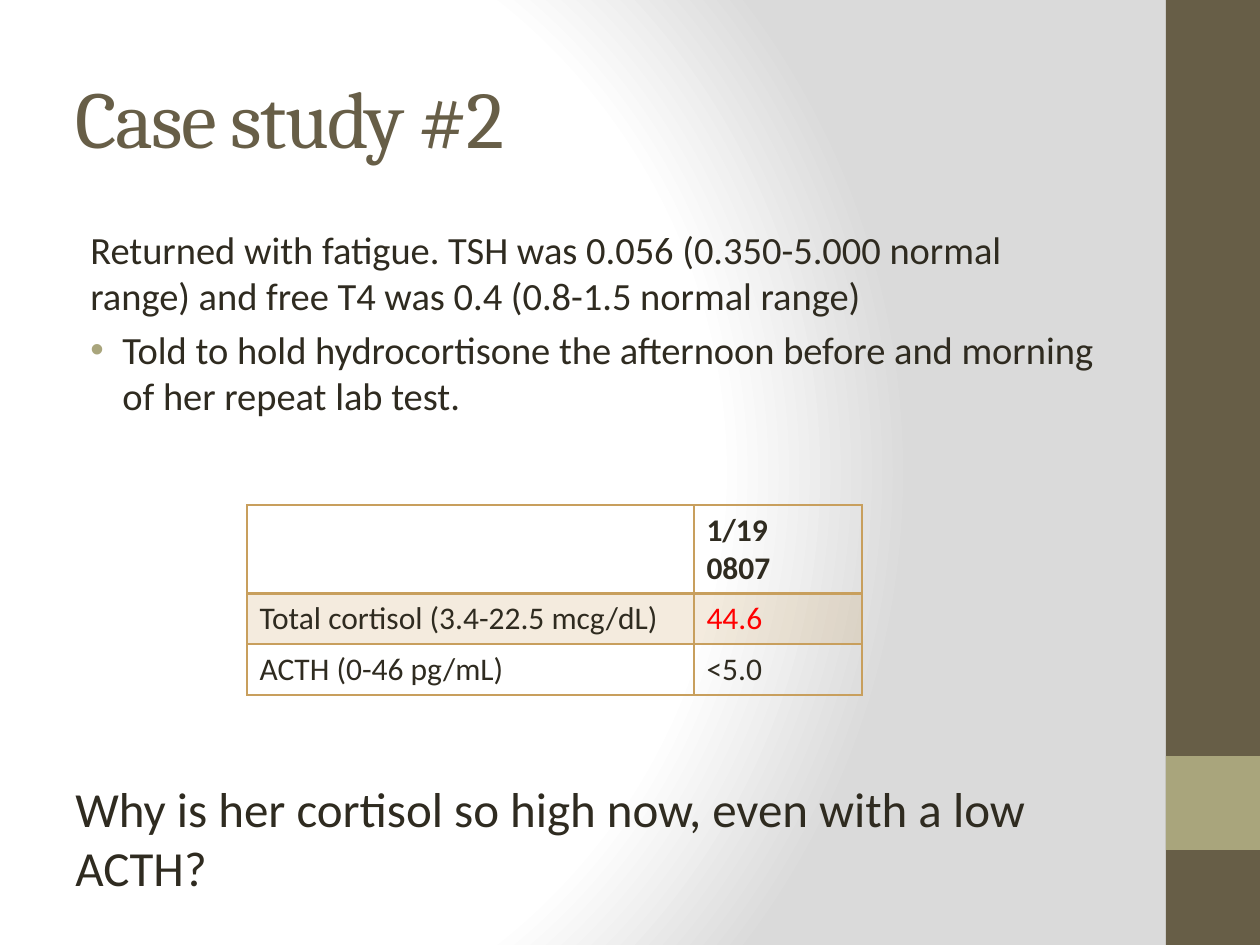
from lxml import etree
from pptx import Presentation
from pptx.dml.color import RGBColor
from pptx.enum.shapes import MSO_SHAPE
from pptx.enum.text import MSO_ANCHOR
from pptx.oxml.ns import qn
from pptx.util import Pt

RECT = MSO_SHAPE.RECTANGLE
TOP, MIDDLE = MSO_ANCHOR.TOP, MSO_ANCHOR.MIDDLE
BROWN = RGBColor(0x67, 0x5E, 0x47)
OLIVE = RGBColor(0xA9, 0xA5, 0x7C)
INK = RGBColor(0x2F, 0x2B, 0x20)
GOLD = RGBColor(0xC8, 0x9F, 0x5D)
RED = RGBColor(0xFF, 0x00, 0x00)
WHITE = RGBColor(0xFF, 0xFF, 0xFF)
GREY = RGBColor(0xDA, 0xDA, 0xDA)
LABS = [["", "1/19\n0807"],
        ["Total cortisol (3.4-22.5 mcg/dL)", "44.6"],
        ["ACTH (0-46 pg/mL)", "<5.0"]]


def px(n):
    """Turn pixels into EMU."""
    return int(n * 914400 / 126)


def sub(node, tag, **attrs):
    """Append a child element with attributes."""
    return etree.SubElement(node, qn(tag), {k: str(v) for k, v in attrs.items()})


def sub_color(node, color):
    """Append a solid colour fill."""
    return sub(sub(node, "a:solidFill"), "a:srgbClr", val=color)


def set_back(slide):
    """Give the slide its round gradient background."""
    slide.background.fill.gradient()
    grad = slide.element.find(".//" + qn("a:gradFill"))
    for child in list(grad):
        grad.remove(child)
    stops = sub(grad, "a:gsLst")
    for pos, color in ((0, WHITE), (75, WHITE), (100, GREY)):
        sub(sub(stops, "a:gs", pos=pos * 1000), "a:srgbClr", val=color)
    way = sub(grad, "a:path", path="circle")
    sub(way, "a:fillToRect", l=20000, t=50000, r=100000, b=50000)


def add_bar(slide, x, y, w, h, color):
    """Add a plain filled rectangle."""
    bar = slide.shapes.add_shape(RECT, px(x), px(y), px(w), px(h))
    bar.shadow.inherit = False
    bar.fill.solid()
    bar.fill.fore_color.rgb = color
    bar.line.fill.background()


def add_frame(slide, x, y, w, h, anchor=TOP):
    """Add a wrapping text box and return its text frame."""
    frame = slide.shapes.add_textbox(px(x), px(y), px(w), px(h)).text_frame
    frame.word_wrap = True
    frame.vertical_anchor = anchor
    return frame


def add_run(para, text, size, color=INK, font="Calibri", bold=False):
    """Add one styled run."""
    run = para.add_run()
    run.text = text
    run.font.size = Pt(size)
    run.font.name = font
    run.font.bold = bold
    run.font.color.rgb = color
    return run


def set_indent(para, left, first=0, dot=None):
    """Set indents and space before, with a bullet if a colour is given."""
    para.space_before = Pt(4.4)
    props = para._p.get_or_add_pPr()
    props.set("marL", str(px(left)))
    props.set("indent", str(px(first)))
    if dot is not None:
        sub(sub(props, "a:buClr"), "a:srgbClr", val=dot)
        sub(props, "a:buFont", typeface="Arial")
        sub(props, "a:buChar", char="•")


def set_edges(cell, base):
    """Draw the four cell borders, the lower one of the given width."""
    props = cell._tc.get_or_add_tcPr()
    for tag, width in (("a:lnL", 1), ("a:lnR", 1), ("a:lnT", 1), ("a:lnB", base)):
        sub_color(sub(props, tag, w=Pt(width)), GOLD)


def set_cell(cell, text, head, tint, color):
    """Fill one table cell."""
    set_edges(cell, 2 if head else 1)
    if tint:
        cell.fill.solid()
        cell.fill.fore_color.rgb = GOLD
        tone = cell._tc.tcPr.find(qn("a:solidFill"))[0]
        sub(tone, "a:alpha", val=20000)
    else:
        cell.fill.background()
    frame = cell.text_frame
    for i, line in enumerate(text.split("\n") if text else []):
        para = frame.add_paragraph() if i else frame.paragraphs[0]
        add_run(para, line, 18, color, bold=head)


def add_labs(slide):
    """Add the table of lab values."""
    wide, high = (447, 168), (87, 51, 51)
    table = slide.shapes.add_table(len(high), len(wide), px(247), px(505),
                                   px(sum(wide)), px(sum(high))).table
    table.horz_banding = False
    table.first_row = False
    for col, w in zip(table.columns, wide):
        col.width = px(w)
    for r, (row, h) in enumerate(zip(table.rows, high)):
        row.height = px(h)
        for c, text in enumerate(LABS[r]):
            color = RED if (r, c) == (1, 1) else INK
            set_cell(row.cells[c], text, r == 0, r == 1, color)


def main():
    """Build and save the slide."""
    deck = Presentation()
    deck.slide_width, deck.slide_height = px(1260), px(945)
    slide = deck.slides.add_slide(deck.slide_layouts[6])
    set_back(slide)
    add_bar(slide, 1166, 0, 94, 945, BROWN)
    add_bar(slide, 1166, 756, 94, 94, OLIVE)

    title = add_frame(slide, 63, 38, 1050, 157, MIDDLE)
    run = add_run(title.paragraphs[0], "Case study #2", 46, BROWN, "Cambria")
    run.font._element.set("spc", "-100")

    body = add_frame(slide, 63, 220, 1050, 662)
    para = body.paragraphs[0]
    set_indent(para, 15)
    add_run(para, "Returned with fatigue. TSH was 0.056 (0.350-5.000 normal "
                  "range) and free T4 was 0.4 (0.8-1.5 normal range)", 22)
    para = body.add_paragraph()
    set_indent(para, 47, -32, OLIVE)
    add_run(para, "Told to hold hydrocortisone the afternoon before and "
                  "morning of her repeat lab test.", 22)

    add_labs(slide)
    ask = add_frame(slide, 63, 772, 1050, 131)
    add_run(ask.paragraphs[0],
            "Why is her cortisol so high now, even with a low ACTH?", 28)
    deck.save("out.pptx")


if __name__ == "__main__":
    main()
